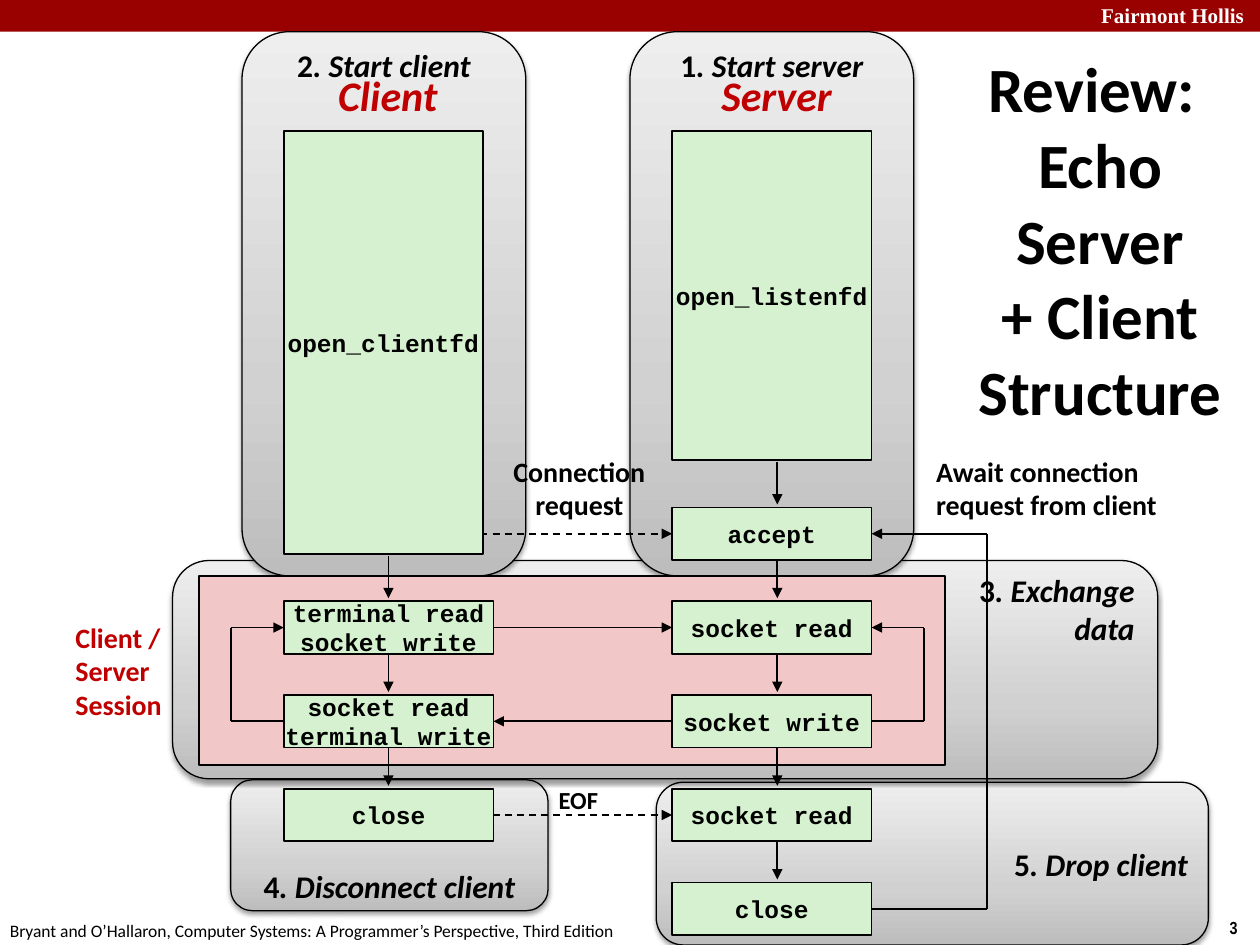
"""Build the echo server and client structure slide."""
from lxml import etree
from pptx import Presentation, util as u
from pptx.dml.color import RGBColor
from pptx.enum import dml, shapes, text
from pptx.oxml import parse_xml
from pptx.oxml.ns import nsdecls, qn

THEME = {
    "sans": "Calibri", "serif": "Times New Roman", "narrow": "Arial Narrow", "mono": "Courier New",
    "black": "000000", "white": "FFFFFF", "banner": "990000", "accent": "C00000",
    "call": "D5F1CF", "session": "F1C7C7",
    "gradient": [(0, "BDBDBD"), (35, "D1D1D1"), (100, "EEEEEE")],
    "title": 36, "role": 24, "step": 18, "label": 16, "code": 14, "banner_text": 12, "footer": 10,
}
LEFT, CENTER, RIGHT = text.PP_ALIGN.LEFT, text.PP_ALIGN.CENTER, text.PP_ALIGN.RIGHT
TOP, MIDDLE, BOTTOM = text.MSO_ANCHOR.TOP, text.MSO_ANCHOR.MIDDLE, text.MSO_ANCHOR.BOTTOM

TITLE = "Review: Echo\vServer\v+ Client\vStructure"
STEPS = [
    ("5", [". Drop client"], (13.23, 15.77, 11.13, 3.28), RIGHT, MIDDLE),
    ("4", [". Disconnect client"], (4.65, 15.72, 6.4, 2.64), CENTER, BOTTOM),
    ("3", [". Exchange", "data"], (3.48, 11.3, 19.86, 4.4), RIGHT, TOP),
    ("2", [". Start client"], (4.88, 0.64, 5.72, 10.97), CENTER, TOP),
    ("1", [". Start server"], (12.7, 0.64, 5.72, 10.97), CENTER, TOP),
]
CLIENT_CALLS = {1: ["terminal read", "socket write"], 2: ["socket read", "terminal write"], 3: ["close"]}
SERVER_CALLS = {0: ["accept"], 1: ["socket read"], 2: ["socket write"], 3: ["socket read"], 4: ["close"]}
LABELS = [
    (["Client"], (6.55, 1.27, 2.54, 1.27), dict(size="role", color="accent", italic=True, align=CENTER)),
    (["Server"], (14.27, 1.27, 2.77, 1.27), dict(size="role", color="accent", italic=True, align=CENTER)),
    (["Client / Server", "Session"], (1.27, 12.37, 2.34, 2.29), dict(color="accent", wrap=True)),
    (["Connection", "request"], (10.08, 9.02, 3.2, 1.63), dict(align=CENTER)),
    (["Await connection", "request from client"], (18.62, 9.02, 5.08, 1.63), {}),
    (["EOF"], (11, 15.7, 1.32, 0.86), dict(size="code", align=CENTER)),
    (["Fairmont Hollis"], (21.95, -0.08, 3.63, 0.76),
     dict(size="banner_text", font="serif", color="white", anchor=TOP, wrap=True)),
    (["3"], (24.54, 18.36, 0.86, 0.69), dict(size="footer", font="narrow", anchor=TOP)),
    (["Bryant and O’Hallaron, Computer Systems: A Programmer’s Perspective, Third Edition"],
     (-0.05, 18.42, 12.9, 0.69), dict(size="footer", bold=False, anchor=TOP)),
]

CLIENT_X, SERVER_X, CLIENT_W, SERVER_W = 5.72, 13.55, 4.23, 4.02
CLIENT_AXIS, SERVER_AXIS = 7.83, 15.67
ROW_TOP, ROW_PITCH, ROW_H, OPEN_TOP = 10.23, 1.89, 1.06, 2.64
CLIENT_EDGE, SERVER_EDGE = CLIENT_X + CLIENT_W, SERVER_X + SERVER_W


def row_top(row):
    return ROW_TOP + row * ROW_PITCH


def row_middle(row):
    return row_top(row) + ROW_H / 2


def lengths(values):
    return [u.Cm(value) for value in values]


def write(shape, lines, size="label", font="sans", color="black", bold=True, italic=False,
          align=LEFT, anchor=MIDDLE, wrap=False, lead=""):
    frame = shape.text_frame
    frame.word_wrap, frame.vertical_anchor = wrap, anchor
    for index, line in enumerate(lines):
        paragraph = frame.paragraphs[0] if index == 0 else frame.add_paragraph()
        paragraph.alignment = align
        pieces = [(lead, False)] if lead and index == 0 else []
        for number, part in enumerate(line.split("\v")):
            pieces += [(None, None)] * (number > 0) + [(part, italic)]
        for words, slanted in pieces:
            if words is None:
                paragraph.add_line_break()
                continue
            run = paragraph.add_run()
            run.text = words
            run.font.name, run.font.size = THEME[font], u.Pt(THEME[size])
            run.font.bold, run.font.italic = bold, slanted
            run.font.color.rgb = RGBColor.from_string(THEME[color])
    return frame


def add_box(slide, area, fill=None, kind=shapes.MSO_SHAPE.RECTANGLE, width=1):
    shape = slide.shapes.add_shape(kind, *lengths(area))
    shape.shadow.inherit = False
    if fill:
        shape.fill.solid()
        shape.fill.fore_color.rgb = RGBColor.from_string(THEME[fill])
    if width:
        shape.line.color.rgb = RGBColor.from_string(THEME["black"])
        shape.line.width = u.Pt(width)
    else:
        shape.line.fill.background()
    return shape


def add_step(slide, number, lines, area, align, anchor):
    shape = add_box(slide, area, kind=shapes.MSO_SHAPE.ROUNDED_RECTANGLE, width=0.75)
    stops = "".join(f'<a:gs pos="{position * 1000}"><a:srgbClr val="{color}"/></a:gs>'
                    for position, color in THEME["gradient"])
    properties = shape.element.spPr
    properties.find(qn("a:prstGeom")).addnext(parse_xml(
        f'<a:gradFill {nsdecls("a")} rotWithShape="1"><a:gsLst>{stops}</a:gsLst>'
        '<a:lin ang="16200000" scaled="0"/></a:gradFill>'))
    properties.find(qn("a:effectLst")).append(parse_xml(
        f'<a:outerShdw {nsdecls("a")} blurRad="40000" dist="20000" dir="5400000" rotWithShape="0">'
        '<a:srgbClr val="000000"><a:alpha val="38000"/></a:srgbClr></a:outerShdw>'))
    frame = write(shape, lines, size="step", italic=True, align=align, anchor=anchor, wrap=True, lead=number)
    frame.margin_top, frame.margin_bottom = 0, u.Cm(0.13 if anchor == TOP else 0)


def add_call(slide, lines, area):
    write(add_box(slide, area, "call"), lines, size="code", font="mono", align=CENTER)


def add_path(slide, *points, dashed=False):
    for index, (start, end) in enumerate(zip(points, points[1:]), 2):
        connector = slide.shapes.add_connector(shapes.MSO_CONNECTOR.STRAIGHT, *lengths(start + end))
        connector.line.color.rgb = RGBColor.from_string(THEME["black"])
        connector.line.width = u.Pt(1)
        if dashed:
            connector.line.dash_style = dml.MSO_LINE.DASH
        properties = connector.element.spPr
        if index == len(points):
            etree.SubElement(properties.find(qn("a:ln")), qn("a:tailEnd"), type="triangle")
        etree.SubElement(properties, qn("a:effectLst"))


def add_loop(slide, edge, turn, start_row, end_row):
    start, end = row_middle(start_row), row_middle(end_row)
    add_path(slide, (edge, start), (turn, start), (turn, end), (edge, end))


def add_flow(slide):
    for axis, rows in ((CLIENT_AXIS, (1, 2, 3)), (SERVER_AXIS, range(5))):
        for row in rows:
            tip = row_top(row) - 0.06
            add_path(slide, (axis, tip - 0.86), (axis, tip))
    for row in (0, 3):
        add_path(slide, (8.46, row_middle(row)), (SERVER_X, row_middle(row)), dashed=True)
    add_path(slide, (CLIENT_EDGE, row_middle(1)), (SERVER_X, row_middle(1)))
    add_path(slide, (SERVER_X, row_middle(2)), (CLIENT_EDGE, row_middle(2)))
    add_loop(slide, CLIENT_X, 4.65, 2, 1)
    add_loop(slide, SERVER_EDGE, 18.62, 2, 1)
    add_loop(slide, SERVER_EDGE, 19.89, 4, 0)


def add_title(slide):
    title = slide.shapes.title
    title.left, title.top, title.width, title.height = lengths((19.05, 3.15, 5.92, 3.33))
    frame = write(title, [TITLE], size="title", align=CENTER, wrap=True)
    frame.auto_size = text.MSO_AUTO_SIZE.NONE
    indent = u.Cm(0.33)
    properties = frame.paragraphs[0]._p.get_or_add_pPr()
    properties.set("marL", str(indent))
    properties.set("indent", str(-indent))


def main():
    presentation = Presentation()
    presentation.slide_width, presentation.slide_height = u.Cm(25.4), u.Cm(19.05)
    slide = presentation.slides.add_slide(presentation.slide_layouts[5])
    add_title(slide)
    add_box(slide, (0, 0, 25.4, 0.64), "banner", width=0)
    for step in STEPS:
        add_step(slide, *step)
    add_box(slide, (4.01, 11.61, 15.04, 3.81), "session")
    add_flow(slide)
    for left, width, calls in ((CLIENT_X, CLIENT_W, CLIENT_CALLS), (SERVER_X, SERVER_W, SERVER_CALLS)):
        for row, lines in calls.items():
            add_call(slide, lines, (left, row_top(row), width, ROW_H))
    add_call(slide, ["open_listenfd"], (SERVER_X, OPEN_TOP, SERVER_W, 6.63))
    add_call(slide, ["open_clientfd"], (CLIENT_X, OPEN_TOP, SERVER_W, 8.53))
    for lines, area, style in LABELS:
        label = slide.shapes.add_textbox(*lengths(area))
        write(label, lines, **style).auto_size = text.MSO_AUTO_SIZE.SHAPE_TO_FIT_TEXT
    presentation.save("out.pptx")


if __name__ == "__main__":
    main()
